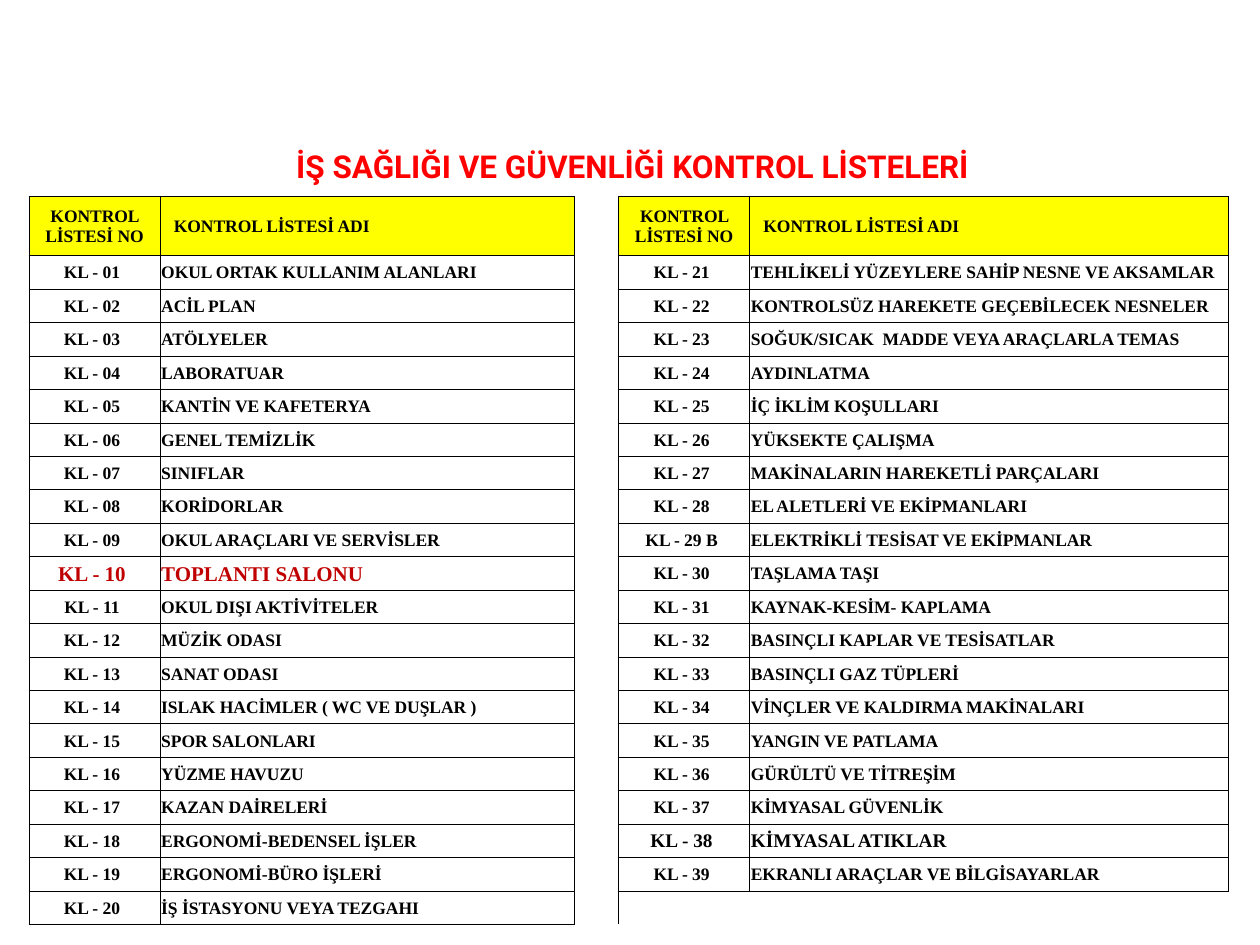
"""Builds a slide listing the school safety checklists in two column pairs."""
from lxml import etree
from pptx import Presentation
from pptx.dml.color import RGBColor
from pptx.enum.text import MSO_ANCHOR, PP_ALIGN
from pptx.oxml.ns import qn
from pptx.util import Inches, Pt

MIDDLE = MSO_ANCHOR.MIDDLE
CENTER, LEFT = PP_ALIGN.CENTER, PP_ALIGN.LEFT
RED = RGBColor(0xFF, 0x00, 0x00)
DARK_RED = RGBColor(0xC0, 0x00, 0x00)
BLACK = RGBColor(0x00, 0x00, 0x00)
YELLOW = RGBColor(0xFF, 0xFF, 0x00)
NO_STYLE = "{2D5ABB26-0587-4C30-8999-92F81FD0307C}"

COLUMN_WIDTHS = (1.04, 3.29, 0.35, 1.04, 3.8)
GAP_COLUMN = 2
HEADER_HEIGHT = 0.47
HEADINGS = ("KONTROL LİSTESİ NO", "KONTROL LİSTESİ ADI")
HIGHLIGHTS = {
    "KL - 10": {"size": 12, "color": DARK_RED},
    "KL - 38": {"size": 11},
}
CODE_SUFFIXES = {29: " B"}
GENERAL_LISTS = (
    "OKUL ORTAK KULLANIM ALANLARI",
    "ACİL PLAN",
    "ATÖLYELER",
    "LABORATUAR",
    "KANTİN VE KAFETERYA",
    "GENEL TEMİZLİK",
    "SINIFLAR",
    "KORİDORLAR",
    "OKUL ARAÇLARI VE SERVİSLER",
    "TOPLANTI SALONU",
    "OKUL DIŞI AKTİVİTELER",
    "MÜZİK ODASI",
    "SANAT ODASI",
    "ISLAK HACİMLER ( WC VE DUŞLAR )",
    "SPOR SALONLARI",
    "YÜZME HAVUZU",
    "KAZAN DAİRELERİ",
    "ERGONOMİ-BEDENSEL İŞLER",
    "ERGONOMİ-BÜRO İŞLERİ",
    "İŞ İSTASYONU VEYA TEZGAHI",
)
HAZARD_LISTS = (
    "TEHLİKELİ YÜZEYLERE SAHİP NESNE VE AKSAMLAR",
    "KONTROLSÜZ HAREKETE GEÇEBİLECEK NESNELER",
    "SOĞUK/SICAK  MADDE VEYA ARAÇLARLA TEMAS",
    "AYDINLATMA",
    "İÇ İKLİM KOŞULLARI",
    "YÜKSEKTE ÇALIŞMA",
    "MAKİNALARIN HAREKETLİ PARÇALARI",
    "EL ALETLERİ VE EKİPMANLARI",
    "ELEKTRİKLİ TESİSAT VE EKİPMANLAR",
    "TAŞLAMA TAŞI",
    "KAYNAK-KESİM- KAPLAMA",
    "BASINÇLI KAPLAR VE TESİSATLAR",
    "BASINÇLI GAZ TÜPLERİ",
    "VİNÇLER VE KALDIRMA MAKİNALARI",
    "YANGIN VE PATLAMA",
    "GÜRÜLTÜ VE TİTREŞİM",
    "KİMYASAL GÜVENLİK",
    "KİMYASAL ATIKLAR",
    "EKRANLI ARAÇLAR VE BİLGİSAYARLAR",
)


def write_text(frame, text, *, font="Times New Roman", size=10, color=BLACK, align=LEFT):
    paragraph = frame.paragraphs[0]
    paragraph.alignment = align
    run = paragraph.add_run()
    run.text = text
    run.font.name = font
    run.font.size = Pt(size)
    run.font.bold = True
    run.font.color.rgb = color


def draw_borders(cell, sides, color=BLACK, width=0.5):
    properties = cell._tc.get_or_add_tcPr()
    for side in sides:
        line = etree.SubElement(properties, qn(f"a:ln{side}"), w=str(Pt(width)))
        fill = etree.SubElement(line, qn("a:solidFill"))
        etree.SubElement(fill, qn("a:srgbClr"), val=str(color))


class ChecklistSlide:
    def __init__(self, slide):
        self.slide = slide
        self.margin = Inches(0.01)
        self.heading_indent = Inches(0.11)
        self.code_offset = Inches(0.05)

    def title(self, text, left, top, width, height):
        title = self.slide.shapes.title
        title.left, title.top = Inches(left), Inches(top)
        title.width, title.height = Inches(width), Inches(height)
        title.text_frame.vertical_anchor = MIDDLE
        write_text(title.text_frame, text, font="Roboto", size=18, color=RED, align=CENTER)

    def set_margins(self, cell):
        cell.vertical_anchor = MIDDLE
        cell.margin_left = cell.margin_right = cell.margin_top = self.margin
        cell.margin_bottom = 0

    def blank(self, cell, sides):
        self.set_margins(cell)
        draw_borders(cell, sides)
        paragraph = cell.text_frame.paragraphs[0]._p
        etree.SubElement(paragraph, qn("a:endParaRPr"), sz="1000")

    def entry(self, cell, text, **text_format):
        self.set_margins(cell)
        draw_borders(cell, "LRTB")
        write_text(cell.text_frame, text, **text_format)

    def pair(self, table, column, first_number, names):
        for offset, heading in enumerate(HEADINGS):
            cell = table.cell(0, column + offset)
            self.entry(cell, heading, align=LEFT if offset else CENTER)
            cell.fill.solid()
            cell.fill.fore_color.rgb = YELLOW
            if offset:
                cell.margin_left = self.heading_indent
        for row, name in enumerate(names, start=1):
            number = first_number + row - 1
            code = f"KL - {number:02d}{CODE_SUFFIXES.get(number, '')}"
            text_format = HIGHLIGHTS.get(code, {})
            code_cell = table.cell(row, column)
            self.entry(code_cell, code, align=CENTER, **text_format)
            code_cell.margin_right = self.code_offset
            self.entry(table.cell(row, column + 1), name, **text_format)

    def checklists(self, left, top, height):
        last_row = len(GENERAL_LISTS)
        frame = self.slide.shapes.add_table(
            last_row + 1, len(COLUMN_WIDTHS), Inches(left), Inches(top),
            Inches(sum(COLUMN_WIDTHS)), Inches(height))
        table = frame.table
        table.first_row = table.horz_banding = False
        table._tbl.tblPr.find(qn("a:tableStyleId")).text = NO_STYLE
        for column, width in zip(table.columns, COLUMN_WIDTHS):
            column.width = Inches(width)
        for row in table.rows:
            row.height = Inches((height - HEADER_HEIGHT) / last_row)
        table.rows[0].height = Inches(HEADER_HEIGHT)
        self.pair(table, 0, 1, GENERAL_LISTS)
        self.pair(table, GAP_COLUMN + 1, last_row + 1, HAZARD_LISTS)
        for row in range(last_row + 1):
            self.blank(table.cell(row, GAP_COLUMN), "L" if row == last_row else "LR")
        for column in range(GAP_COLUMN + 1, len(COLUMN_WIDTHS)):
            self.blank(table.cell(last_row, column), "T")


def main():
    deck = Presentation()
    deck.slide_width, deck.slide_height = Inches(10), Inches(7.5)
    page = ChecklistSlide(deck.slides.add_slide(deck.slide_layouts[5]))
    page.title("İŞ SAĞLIĞI VE GÜVENLİĞİ KONTROL LİSTELERİ", 0.02, 0.92, 10, 0.79)
    page.checklists(0.23, 1.56, 5.78)
    deck.save("out.pptx")


if __name__ == "__main__":
    main()
